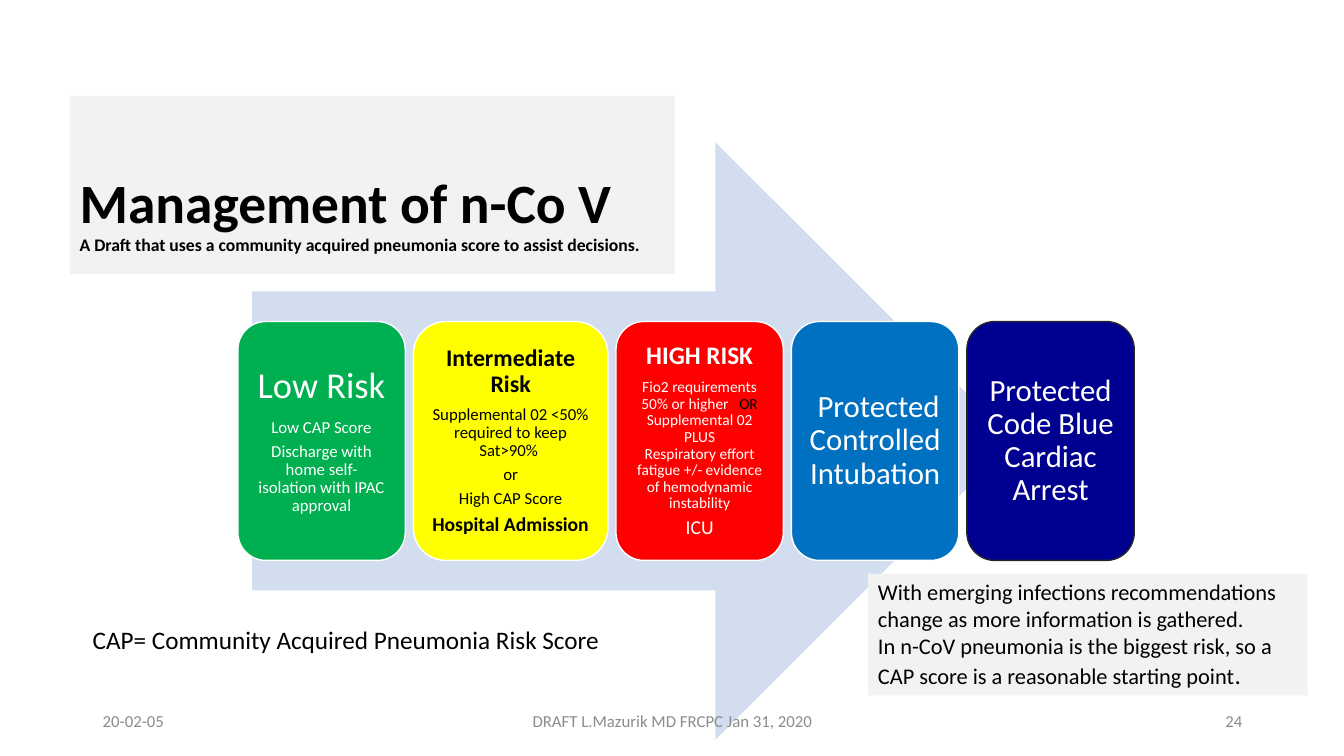
from copy import deepcopy
from pptx import Presentation
from pptx.dml.color import RGBColor
from pptx.enum.shapes import MSO_SHAPE as Kind
from pptx.enum.text import MSO_ANCHOR as Anchor, MSO_AUTO_SIZE as Auto, PP_ALIGN as Align
from pptx.util import Inches, Pt

WHITE, BLACK, PALE, GREY = "FFFFFF", "000000", "F2F2F2", "8C8C8C"


def paint(shape, fill, line=None):
    """Set fill and outline; without a line colour the outline is hidden."""
    shape.fill.solid()
    shape.fill.fore_color.rgb = RGBColor.from_string(fill)
    if line:
        shape.line.color.rgb = RGBColor.from_string(line)
        shape.line.width = Pt(1)
    else:
        shape.line.fill.background()


def write(frame, paras, align=Align.LEFT, lead=1.0, after=0, **look):
    """Fill a frame with paragraphs of (text, size, colour, bold) runs."""
    look = {"word_wrap": True, "vertical_anchor": Anchor.MIDDLE, **look}
    for name, value in look.items():
        setattr(frame, name, value)
    for i, runs in enumerate(paras):
        para = frame.add_paragraph() if i else frame.paragraphs[0]
        para.alignment, para.line_spacing = align, lead
        para.space_after = Pt(after * runs[0][1])
        for text, size, color, bold in runs:
            for j, part in enumerate(text.split("\n")):
                if j:
                    para.add_line_break()
                    para._p[-1].append(deepcopy(run._r.rPr))
                run = para.add_run()
                run.text = part
                font = run.font
                font.name, font.size, font.bold = "Calibri", Pt(size), bold
                font.color.rgb = RGBColor.from_string(color)


deck = Presentation()
deck.slide_width, deck.slide_height = Inches(13.33), Inches(7.5)
slide = deck.slides.add_slide(deck.slide_layouts[5])
shapes = slide.shapes

# Title
title = shapes.title
title.left, title.top, title.width, title.height = map(Inches, (0.69, 0.95, 6, 1.77))
paint(title, PALE)
write(title.text_frame, [[
    ("Management of n-Co V\n", 39.6, BLACK, True),
    ("A Draft that uses a community acquired pneumonia score to assist decisions.",
     12.6, BLACK, True)]],
    lead=0.9, vertical_anchor=Anchor.BOTTOM, margin_bottom=Inches(0.19),
    auto_size=Auto.NONE)

# Arrow behind the cards
arrow = shapes.add_shape(Kind.RIGHT_ARROW, *map(Inches, (2.5, 1.41, 7.56, 5.93)))
arrow.shadow.inherit = False
paint(arrow, "D2DEEF")

# Risk cards: width, fill, line, inset, paragraphs
cards = [
    (1.66, "00B050", WHITE, 0.11, [
        [("Low Risk", 26, WHITE, False)],
        [("Low CAP Score", 12, WHITE, False)],
        [("Discharge with home self-isolation with IPAC approval", 12, WHITE, False)]]),
    (1.93, "FFFF00", WHITE, 0.07, [
        [("Intermediate Risk", 17, BLACK, True)],
        [("Supplemental 02 <50% required to keep Sat>90% ", 12, BLACK, False)],
        [("or", 12, BLACK, False)],
        [("High CAP Score", 12, BLACK, False)],
        [("Hospital Admission", 14, BLACK, True)]]),
    (1.66, "FF0000", WHITE, 0.07, [
        [("HIGH RISK", 18, WHITE, True)],
        [("Fio2 requirements 50% or higher   ", 11, WHITE, False),
         ("OR ", 11, BLACK, False),
         ("Supplemental 02 PLUS\nRespiratory effort fatigue +/- evidence of "
          "hemodynamic instability", 11, WHITE, False)],
        [("ICU", 14, WHITE, False)]]),
    (1.66, "0070C0", WHITE, 0.09, [
        [(" Protected Controlled Intubation", 22, WHITE, False)]]),
    (1.66, "000090", "262626", 0.09, [
        [("Protected Code Blue Cardiac Arrest", 22, WHITE, False)]]),
]
left, gap = 2.36, 0.08
sides = ("margin_left", "margin_top", "margin_right", "margin_bottom")
for width, fill, line, inset, paras in cards:
    card = shapes.add_shape(Kind.ROUNDED_RECTANGLE,
                            *map(Inches, (left, 3.19, width, 2.37)))
    card.shadow.inherit = False
    paint(card, fill, line)
    write(card.text_frame, paras, Align.CENTER, 0.9, 0.35,
          **dict.fromkeys(sides, Inches(inset)))
    left += width + gap

# Footer row
for left, width, align, text in [
        (0.92, 3, Align.LEFT, "20-02-05"),
        (9.42, 3, Align.RIGHT, "24"),
        (4.42, 4.5, Align.CENTER, "DRAFT L.Mazurik MD FRCPC Jan 31, 2020")]:
    box = shapes.add_textbox(*map(Inches, (left, 6.95, width, 0.4)))
    write(box.text_frame, [[(text, 12, GREY, False)]], align)

# Notes below the cards
key = shapes.add_textbox(*map(Inches, (0.82, 6.14, 5.28, 0.4)))
write(key.text_frame,
      [[("CAP= Community Acquired Pneumonia Risk Score", 18, BLACK, False)]],
      word_wrap=False, vertical_anchor=Anchor.TOP)

note = shapes.add_textbox(*map(Inches, (8.61, 5.69, 4.36, 1.21)))
paint(note, PALE)
write(note.text_frame, [
    [("With emerging infections recommendations change as more information is gathered.",
      16, BLACK, False)],
    [("In n-CoV pneumonia is the biggest risk, so a CAP score is a reasonable "
      "starting point", 16, BLACK, False),
     (".", 18, BLACK, False)]],
    vertical_anchor=Anchor.TOP)

deck.save("out.pptx")
